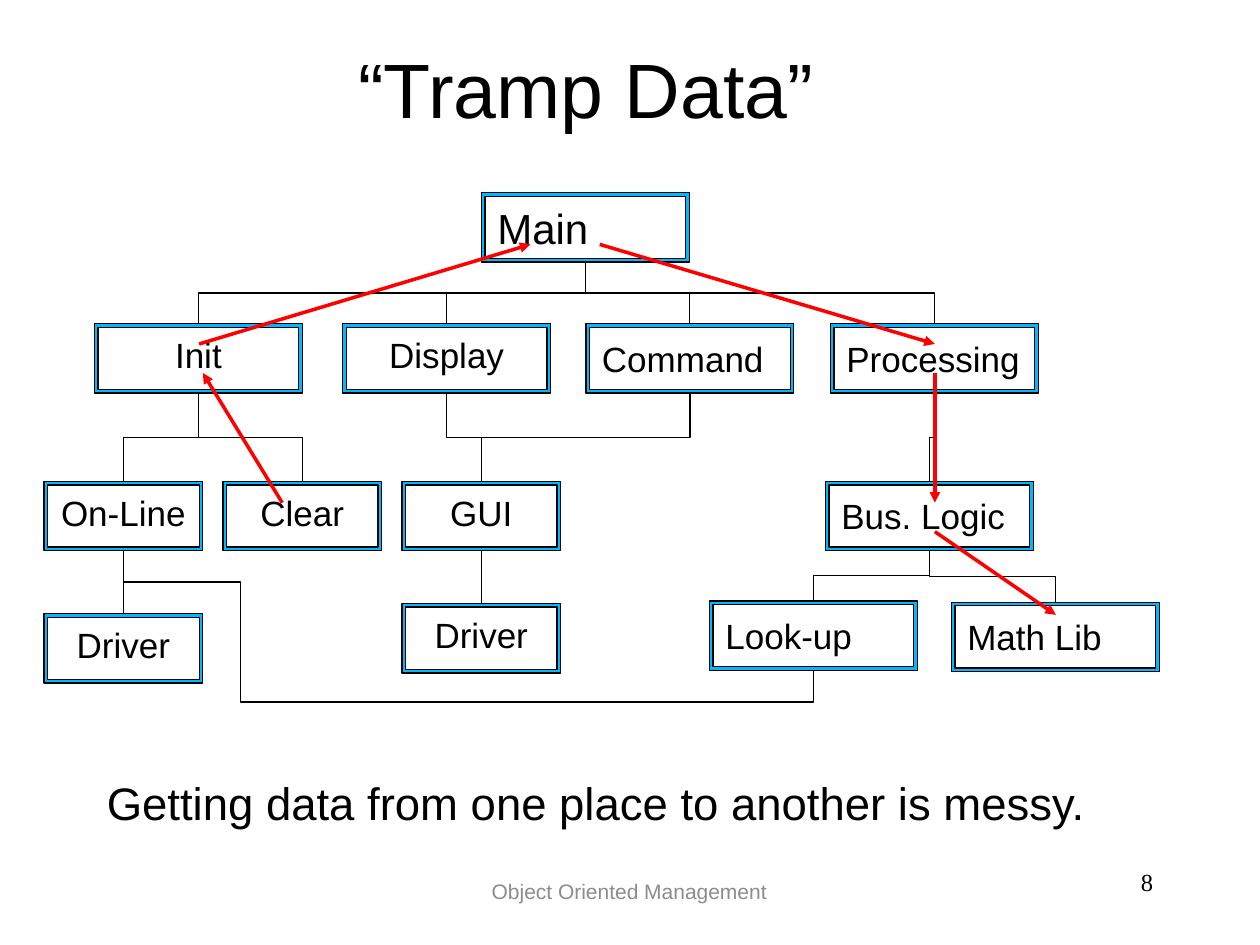
from lxml import etree
from pptx import Presentation
from pptx.dml.color import RGBColor
from pptx.enum.shapes import MSO_CONNECTOR, MSO_SHAPE
from pptx.enum.text import MSO_ANCHOR, PP_ALIGN
from pptx.oxml.ns import qn
from pptx.util import Inches, Pt

COLOURS = {"ink": "000000", "frame": "00B8FF", "data": "FF0000", "footer": "8C8C8C"}
TOP, BOTTOM = 0, 2
WIDE, NARROW, HEIGHT = 1.65, 1.26, 0.55

# key: (label, left, top, width, alignment, anchor, size)
CENTRED = (PP_ALIGN.CENTER, MSO_ANCHOR.TOP, 20)
LEFT = (PP_ALIGN.LEFT, MSO_ANCHOR.MIDDLE, 20)
MODULES = {
    "main": ("Main", 3.82, 1.53, WIDE, PP_ALIGN.LEFT, MSO_ANCHOR.TOP, 24),
    "init": ("Init", 0.75, 2.57, WIDE, *CENTRED),
    "display": ("Display", 2.72, 2.57, WIDE, *CENTRED),
    "command": ("Command", 4.65, 2.57, WIDE, *LEFT),
    "processing": ("Processing", 6.59, 2.57, WIDE, *LEFT),
    "online": ("On-Line", 0.35, 3.82, NARROW, *CENTRED),
    "clear": ("Clear", 1.77, 3.82, NARROW, *CENTRED),
    "gui": ("GUI", 3.19, 3.82, NARROW, *CENTRED),
    "gui driver": ("Driver", 3.19, 4.79, NARROW, *CENTRED),
    "online driver": ("Driver", 0.35, 4.87, NARROW, *CENTRED),
    "logic": ("Bus. Logic", 6.55, 3.82, WIDE, *LEFT),
    "math": ("Math Lib", 7.55, 4.78, WIDE, *LEFT),
    "lookup": ("Look-up", 5.63, 4.77, WIDE, *LEFT),
}
CALLS = {
    "main": ["init", "display", "command", "processing"],
    "init": ["online", "clear"],
    "display": ["gui"],
    "command": ["gui"],
    "processing": ["logic"],
    "logic": ["math", "lookup"],
}
DRIVER_CALLS = {"online": "online driver", "gui": "gui driver"}
DATA_FLOW = [
    ((2.24, 3.99), (1.61, 2.96)),
    ((1.58, 2.73), (4.21, 1.94)),
    ((4.76, 1.94), (7.42, 2.73)),
    ((7.42, 2.96), (7.42, 3.99)),
    ((7.42, 4.22), (8.38, 4.88)),
]


class SlideBuilder:
    def __init__(self, slide, font="Arial"):
        self.slide = slide
        self.font = font

    def set_text(self, shape, text, size, colour="ink", align=PP_ALIGN.LEFT,
                 anchor=MSO_ANCHOR.TOP, font=None):
        frame = shape.text_frame
        frame.text = text
        frame.word_wrap = True
        frame.vertical_anchor = anchor
        paragraph = frame.paragraphs[0]
        paragraph.alignment = align
        span = paragraph.runs[0]
        span.font.name = font or self.font
        span.font.size = Pt(size)
        span.font.color.rgb = RGBColor.from_string(COLOURS[colour])

    def title(self, text, left, top, width, height):
        title = self.slide.shapes.title
        title.left, title.top = Inches(left), Inches(top)
        title.width, title.height = Inches(width), Inches(height)
        self.set_text(title, text, 44, align=PP_ALIGN.CENTER, anchor=MSO_ANCHOR.MIDDLE)

    def text(self, text, left, top, width, height, size, **style):
        box = self.slide.shapes.add_textbox(
            Inches(left), Inches(top), Inches(width), Inches(height))
        self.set_text(box, text, size, **style)

    def module(self, label, left, top, width, align, anchor, size):
        box = self.slide.shapes.add_shape(
            MSO_SHAPE.FRAME, Inches(left), Inches(top), Inches(width), Inches(HEIGHT))
        box.adjustments[0] = 0.052
        box.shadow.inherit = False
        box.fill.solid()
        box.fill.fore_color.rgb = RGBColor.from_string(COLOURS["frame"])
        box.line.color.rgb = RGBColor.from_string(COLOURS["ink"])
        box.line.width = Pt(0.75)
        self.set_text(box, label, size, align=align, anchor=anchor)
        if align == PP_ALIGN.CENTER:
            box.text_frame.word_wrap = False
        return box

    def connector(self, kind, start, end, colour, width):
        line = self.slide.shapes.add_connector(kind, *start, *end)
        line.line.color.rgb = RGBColor.from_string(COLOURS[colour])
        line.line.width = Pt(width)
        etree.SubElement(line._element.spPr, qn("a:effectLst"))
        return line

    def call(self, caller, called, kind=MSO_CONNECTOR.ELBOW):
        """Join the bottom of one module to the top of another."""
        line = self.connector(kind, (0, 0), (0, 0), "ink", 0.75)
        line.begin_connect(caller, BOTTOM)
        line.end_connect(called, TOP)
        if kind == MSO_CONNECTOR.ELBOW:
            self.turn_upright(line)
        return line

    def turn_upright(self, line):
        """Make an elbow leave and arrive vertically."""
        across = line.end_x - line.begin_x
        down = line.end_y - line.begin_y
        centre_x = (line.begin_x + line.end_x) // 2
        centre_y = (line.begin_y + line.end_y) // 2
        line.width, line.height = abs(down), abs(across)
        line.left = centre_x - abs(down) // 2
        line.top = centre_y - abs(across) // 2
        frame = line._element.spPr.find(qn("a:xfrm"))
        frame.attrib.pop("flipH", None)
        frame.attrib.pop("flipV", None)
        frame.set("rot", str((90 if across < 0 else 270) * 60000))
        if (across < 0) == (down < 0):
            frame.set("flipH", "1")

    def detour(self, caller, called, bends):
        """Join two modules by a five-part elbow with the given bend positions."""
        line = self.call(caller, called)
        geometry = line._element.spPr.find(qn("a:prstGeom"))
        geometry.set("prst", "bentConnector5")
        guides = geometry.find(qn("a:avLst"))
        for number, bend in enumerate(bends, 1):
            etree.SubElement(guides, qn("a:gd"), name=f"adj{number}",
                             fmla=f"val {round(bend * 100000)}")

    def data_arrow(self, start, end):
        line = self.connector(MSO_CONNECTOR.STRAIGHT, map(Inches, start),
                              map(Inches, end), "data", 2)
        outline = line._element.spPr.find(qn("a:ln"))
        etree.SubElement(outline, qn("a:tailEnd"), type="triangle")


def main():
    deck = Presentation()
    deck.slide_width, deck.slide_height = Inches(10), Inches(7.5)
    page = SlideBuilder(deck.slides.add_slide(deck.slide_layouts[5]))

    page.title("“Tramp Data”", 0.4, 0.28, 8.5, 0.83)
    page.text("Object Oriented Management", 2.95, 6.83, 4.09, 0.49, 12,
              colour="footer", align=PP_ALIGN.CENTER, anchor=MSO_ANCHOR.MIDDLE)
    page.text("8", 7.17, 6.83, 2.08, 0.49, 14,
              align=PP_ALIGN.RIGHT, font="Times New Roman")

    boxes = {key: page.module(*module) for key, module in MODULES.items()}
    for caller, called_modules in CALLS.items():
        for called in called_modules:
            page.call(boxes[caller], boxes[called])
    for caller, driver in DRIVER_CALLS.items():
        page.call(boxes[caller], boxes[driver], MSO_CONNECTOR.STRAIGHT)
    page.detour(boxes["lookup"], boxes["online driver"], (-0.56, 0.83, 1.56))

    page.text("Getting data from one place to another is messy.",
              0.75, 6.1, 8.5, 0.54, 26)
    for start, end in DATA_FLOW:
        page.data_arrow(start, end)

    deck.save("out.pptx")


if __name__ == "__main__":
    main()
